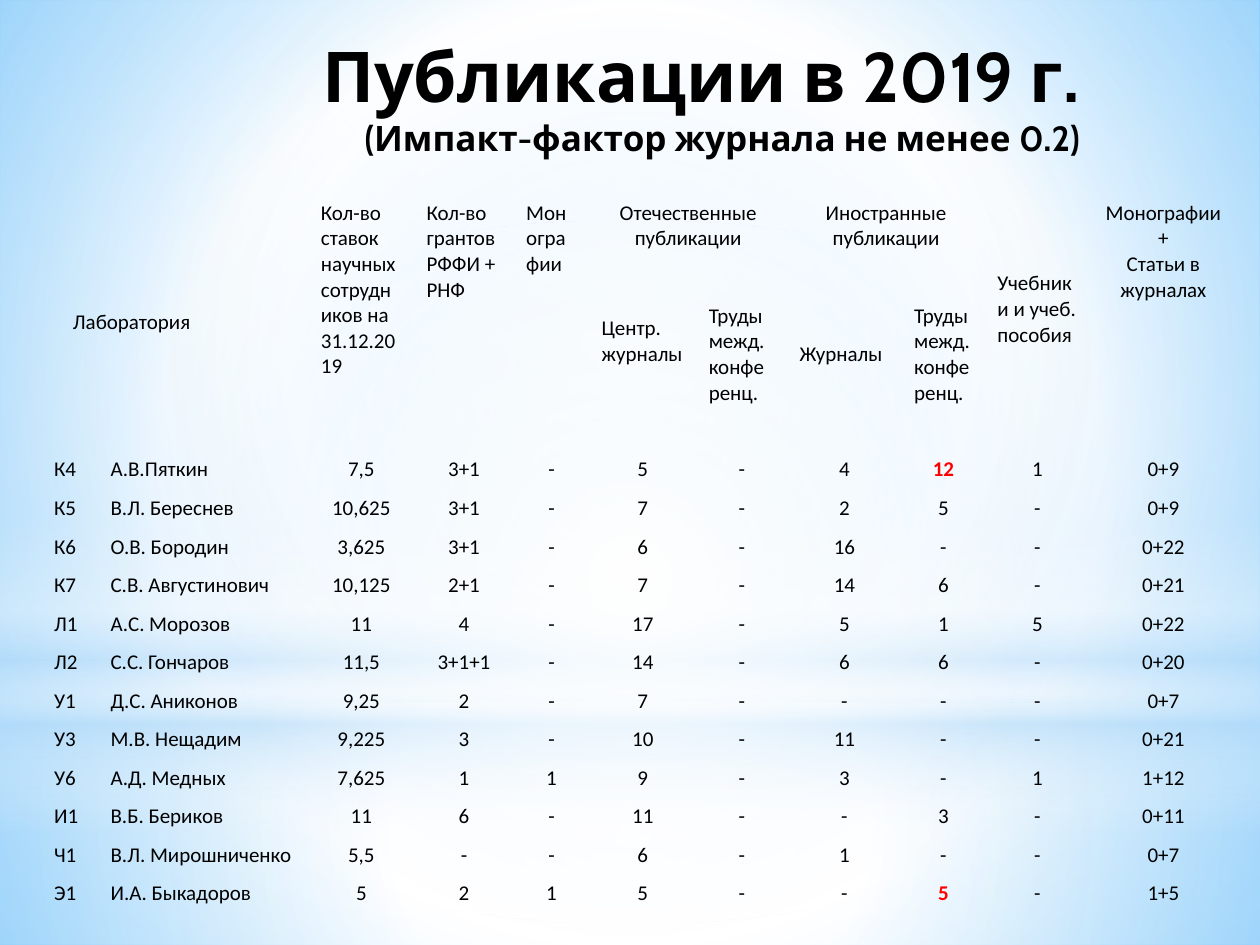
"""Builds the slide with the table of laboratory publications in 2019."""
from lxml import etree
from pptx import Presentation
from pptx.dml.color import RGBColor
from pptx.enum.shapes import MSO_SHAPE
from pptx.enum.text import MSO_ANCHOR, PP_ALIGN
from pptx.oxml.ns import qn
from pptx.util import Cm, Pt

RECT, OVAL = MSO_SHAPE.RECTANGLE, MSO_SHAPE.OVAL
TOP, MIDDLE = MSO_ANCHOR.TOP, MSO_ANCHOR.MIDDLE
LEFT, CENTER, RIGHT = PP_ALIGN.LEFT, PP_ALIGN.CENTER, PP_ALIGN.RIGHT
PLAIN_TABLE = "{2D5ABB26-0587-4C30-8999-92F81FD0307C}"

BACKGROUND = [(0, "99D4FE", 100), (60, "FFFFFF", 100), (100, "54BDFF", 100)]
LAYERS = [
    (RECT, 0, 14.17, 25.4, 4.88, [(0, "FFFFFF", 90), (37, "FFFFFF", 75), (100, "B4DCFA", 78)], None),
    (RECT, 0, 0, 25.4, 14.17, [(0, "FFFFFF", 87), (48, "FFFFFF", 61), (100, "B4DCFA", 78)], None),
    (RECT, 0, 10.46, 25.4, 6.35, [(0, "FFFFFF", 0), (29, "FFFFFF", 29), (45, "B4DCFA", 40),
                                  (55, "FFFFFF", 25), (65, "B4DCFA", 60), (100, "FFFFFF", 0)], 90),
    (OVAL, 0, 4.45, 25.4, 14.17, [(0, "FFFFFF", 100), (56, "FFFFFF", 0), (100, "FFFFFF", 0)], None),
]

COLUMNS = [1.14, 4.24, 2.13, 2.01, 1.52, 2.16, 1.83, 2.31, 1.68, 2.11, 2.97]
HEADER_ROWS = [1.3, 3.86]
DATA_ROW = 0.77
HEADERS = [
    (0, 0, 2, 2, ["Лаборатория"], {"anchor": MIDDLE, "left": 0.63}),
    (0, 2, 2, 1, ["Кол-во ставок научных сотрудников на 31.12.2019"], {}),
    (0, 3, 2, 1, ["Кол-во грантов", "РФФИ + РНФ"], {}),
    (0, 4, 2, 1, ["Монографии"], {}),
    (0, 5, 1, 2, ["Отечественные публикации"], {"align": CENTER}),
    (0, 7, 1, 2, ["Иностранные публикации"], {"align": CENTER}),
    (0, 9, 2, 1, ["Учебники и учеб. пособия"], {"anchor": MIDDLE, "bottom": 0.65}),
    (0, 10, 2, 1, ["Монографии", "+", "Статьи в журналах"], {"align": CENTER}),
    (1, 5, 1, 1, ["Центр.", "журналы"], {"anchor": MIDDLE, "bottom": 0.65}),
    (1, 6, 1, 1, ["Труды межд. конференц."], {"anchor": MIDDLE}),
    (1, 7, 1, 1, ["Журналы"], {"anchor": MIDDLE}),
    (1, 8, 1, 1, ["Труды межд.конференц."], {"anchor": MIDDLE}),
]
LABS = [line.split("|") for line in (
    "К4|А.В.Пяткин|7,5|3+1|-|5|-|4|12|1|0+9",
    "К5|В.Л. Береснев|10,625|3+1|-|7|-|2|5|-|0+9",
    "К6|О.В. Бородин|3,625|3+1|-|6|-|16|-|-|0+22",
    "К7|С.В. Августинович|10,125|2+1|-|7|-|14|6|-|0+21",
    "Л1|А.С. Морозов|11|4|-|17|-|5|1|5|0+22",
    "Л2|С.С. Гончаров|11,5|3+1+1|-|14|-|6|6|-|0+20",
    "У1|Д.С. Аниконов|9,25|2|-|7|-|-|-|-|0+7",
    "У3|М.В. Нещадим|9,225|3|-|10|-|11|-|-|0+21",
    "У6|А.Д. Медных|7,625|1|1|9|-|3|-|1|1+12",
    "И1|В.Б. Бериков|11|6|-|11|-|-|3|-|0+11",
    "Ч1|В.Л. Мирошниченко|5,5|-|-|6|-|1|-|-|0+7",
    "Э1|И.А. Быкадоров|5|2|1|5|-|-|5|-|1+5",
)]
HIGHLIGHTS = {("К4", 8), ("Э1", 8)}


def rgb(value):
    """Turn a hex string into a colour."""
    return RGBColor.from_string(value)


def add_text(p, text, font="Calibri", size=12, color="000000", bold=False, align=LEFT):
    """Add a formatted run to a paragraph."""
    p.alignment = align
    r = p.add_run()
    r.text = text
    r.font.name, r.font.size, r.font.bold = font, Pt(size), bold
    r.font.color.rgb = rgb(color)


def paint_gradient(parent, stops, angle=None):
    """Replace the solid fill in parent by a linear or circular gradient."""
    grad = etree.Element(qn("a:gradFill"), rotWithShape="1")
    stop_list = etree.SubElement(grad, qn("a:gsLst"))
    for pos, color, alpha in stops:
        stop = etree.SubElement(stop_list, qn("a:gs"), pos=str(pos * 1000))
        clr = etree.SubElement(stop, qn("a:srgbClr"), val=color)
        etree.SubElement(clr, qn("a:alpha"), val=str(alpha * 1000))
    if angle is None:
        circle = etree.SubElement(grad, qn("a:path"), {"path": "circle"})
        etree.SubElement(circle, qn("a:fillToRect"), l="50000", t="50000", r="50000", b="50000")
    else:
        etree.SubElement(grad, qn("a:lin"), ang=str(angle * 60000), scaled="0")
    parent.replace(parent.find(qn("a:solidFill")), grad)


class SlideBuilder:
    """Holds the style and the current slide."""

    title_font = "Cabin"

    def __init__(self, prs):
        """Add a title-only slide."""
        self.slide = prs.slides.add_slide(prs.slide_layouts[5])

    def background(self, stops):
        """Fill the background with a circular gradient."""
        self.slide.background.fill.solid()
        paint_gradient(next(self.slide.element.iter(qn("p:bgPr"))), stops)

    def layer(self, kind, x, y, w, h, stops, angle):
        """Add a gradient shape without an outline."""
        sp = self.slide.shapes.add_shape(kind, Cm(x), Cm(y), Cm(w), Cm(h))
        sp.shadow.inherit = False
        sp.line.fill.background()
        sp.fill.solid()
        paint_gradient(sp.element.spPr, stops, angle)

    def title(self, x, y, w, h, text, subtitle):
        """Place the title above the layers and write its two lines."""
        sp = self.slide.shapes.title
        self.slide.shapes.element.append(sp.element)
        sp.left, sp.top, sp.width, sp.height = Cm(x), Cm(y), Cm(w), Cm(h)
        tf = sp.text_frame
        tf.word_wrap, tf.vertical_anchor = True, TOP
        p = tf.paragraphs[0]
        add_text(p, text, font=self.title_font, size=40, bold=True, align=RIGHT)
        p.add_line_break()
        add_text(p, subtitle, font=self.title_font, size=20, bold=True, align=RIGHT)

    def cell(self, cell, lines, anchor=TOP, left=0.25, bottom=0.13, **fmt):
        """Write lines into a table cell."""
        cell.vertical_anchor = anchor
        cell.margin_left, cell.margin_right = Cm(left), Cm(0.25)
        cell.margin_top, cell.margin_bottom = Cm(0.13), Cm(bottom)
        tf = cell.text_frame
        for i, line in enumerate(lines):
            add_text(tf.add_paragraph() if i else tf.paragraphs[0], line, **fmt)

    def table(self, x, y):
        """Add the publications table."""
        heights = HEADER_ROWS + [DATA_ROW] * len(LABS)
        frame = self.slide.shapes.add_table(len(heights), len(COLUMNS), Cm(x), Cm(y),
                                            Cm(sum(COLUMNS)), Cm(sum(heights)))
        tbl = frame.table
        tbl.first_row = tbl.horz_banding = False
        next(frame.element.iter(qn("a:tableStyleId"))).text = PLAIN_TABLE
        for col, width in zip(tbl.columns, COLUMNS):
            col.width = Cm(width)
        for row, height in zip(tbl.rows, heights):
            row.height = Cm(height)
        for cell in tbl.iter_cells():
            cell.fill.background()
        for row, col, rows, cols, lines, fmt in HEADERS:
            cell = tbl.cell(row, col)
            if rows * cols > 1:
                cell.merge(tbl.cell(row + rows - 1, col + cols - 1))
            self.cell(cell, lines, **fmt)
        for i, lab in enumerate(LABS, len(HEADER_ROWS)):
            for j, value in enumerate(lab):
                marked = (lab[0], j) in HIGHLIGHTS
                self.cell(tbl.cell(i, j), [value], align=CENTER if j > 1 else LEFT,
                          color="FF0000" if marked else "000000", bold=marked)


def main():
    """Build and save the presentation."""
    prs = Presentation()
    prs.slide_width, prs.slide_height = Cm(25.4), Cm(19.05)
    s = SlideBuilder(prs)
    s.background(BACKGROUND)
    for layer in LAYERS:
        s.layer(*layer)
    s.title(3.43, 0.53, 18.59, 3.38, "Публикации в 2019 г.", "(Импакт-фактор журнала не менее 0.2)")
    s.table(0.84, 3.91)
    prs.save("out.pptx")


if __name__ == "__main__":
    main()
